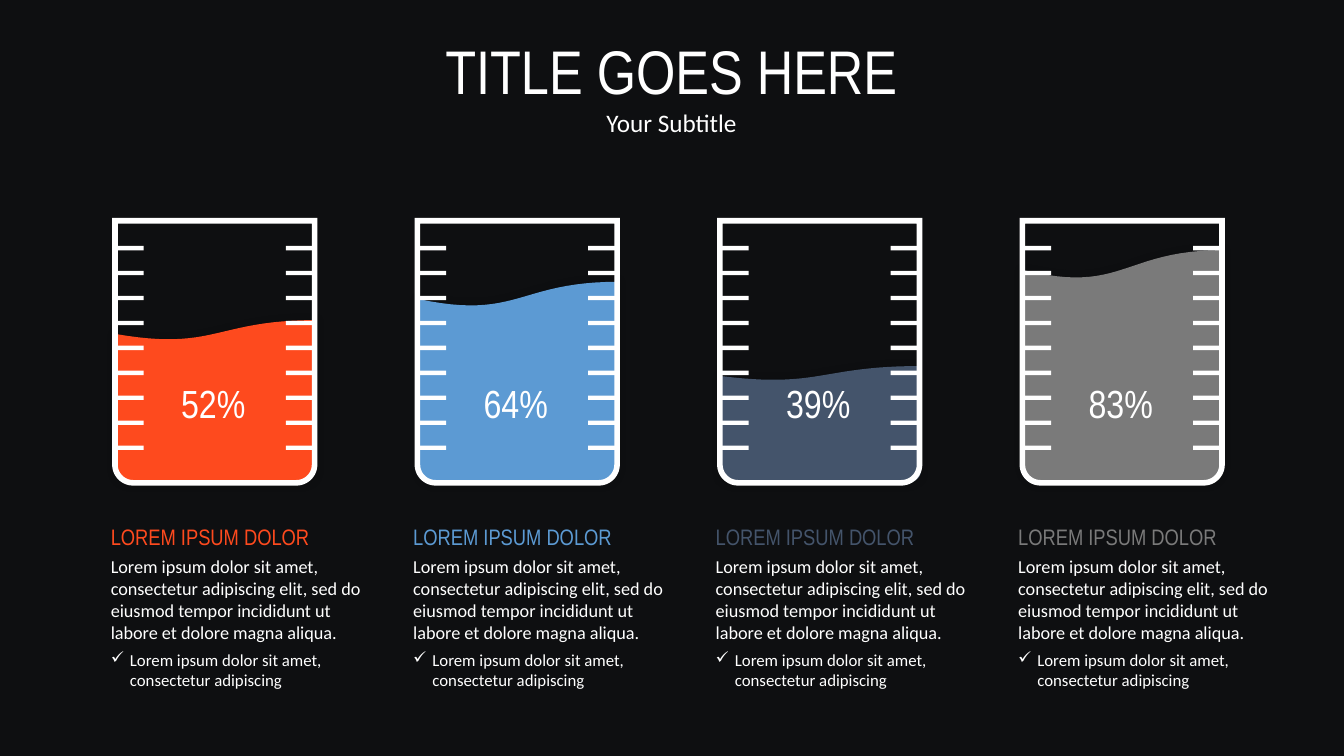
from dataclasses import dataclass

from lxml.etree import SubElement
from pptx import Presentation
from pptx.dml.color import RGBColor
from pptx.enum.text import MSO_AUTO_SIZE as AutoSize, PP_ALIGN as Align
from pptx.oxml.ns import qn
from pptx.util import Inches, Pt

SLIDE_W, SLIDE_H = 13.33, 7.5
FIRST_COLUMN, COLUMN_PITCH = 1, 3
BEAKER_INSET, BEAKER_TOP, BEAKER_BOTTOM = 0.14, 2.19, 4.79
BEAKER_W, CORNER = 1.98, 0.18
LIQUID_W, LIQUID_BOTTOM = 1.99, 4.8
TICK_COUNT, FIRST_TICK, TICK_PITCH = 9, 2.44, 0.2475
TICK_W, TICK_H, TICK_SPAN = 0.295, 0.043, 2
CURVE_STEPS = 24


@dataclass(frozen=True)
class Theme:
    background: str = "0E0F11"
    light: str = "FFFFFF"
    shadow: str = "000000"
    display: str = "Arial Narrow"
    text: str = "Calibri"
    title: int = 44
    percent: int = 28
    subtitle: int = 18
    heading: int = 16
    body: int = 13
    bullet: int = 12


THEME = Theme()
HEADING = "LOREM IPSUM DOLOR"
BODY = ("Lorem ipsum dolor sit amet, consectetur adipiscing elit, sed do "
        "eiusmod tempor incididunt ut labore et dolore magna aliqua.")
CHECKED = "Lorem ipsum dolor sit amet, consectetur adipiscing"
# percentage, height of the liquid, colour
BEAKERS = [
    ("52%", 1.71, "FE4A1E"),
    ("64%", 2.11, "5C9AD3"),
    ("39%", 1.23, "44546B"),
    ("83%", 2.44, "7A7A7A"),
]


def rgb(color):
    return RGBColor.from_string(color)


def add_box(shapes, left, top, width, height, inset=None):
    box = shapes.add_textbox(*map(Inches, (left, top, width, height)))
    frame = box.text_frame
    frame.word_wrap = True
    frame.auto_size = AutoSize.SHAPE_TO_FIT_TEXT
    if inset is not None:
        frame.margin_left = frame.margin_right = Inches(inset)
        frame.margin_top = frame.margin_bottom = Inches(inset)
    return frame


def write(frame, text, *, size, font=THEME.text, color=THEME.light,
          align=Align.LEFT, before=0, bullet=None, indent=0.19):
    """Fill the empty first paragraph, or append a new one."""
    first = frame.paragraphs[0]
    paragraph = frame.add_paragraph() if first.runs else first
    paragraph.alignment = align
    if before:
        paragraph.space_before = Pt(before)
    if bullet:
        properties = paragraph._p.get_or_add_pPr()
        properties.set("marL", str(Inches(indent)))
        properties.set("indent", str(-Inches(indent)))
        SubElement(properties, qn("a:buChar"), char=bullet)
    run = paragraph.add_run()
    run.text = text
    run.font.size = Pt(size)
    run.font.name = font
    run.font.color.rgb = rgb(color)


def curve(start, control_1, control_2, end):
    """Points along a cubic Bezier curve, both ends included."""
    points = []
    for step in range(CURVE_STEPS + 1):
        t = step / CURVE_STEPS
        weights = ((1 - t) ** 3, 3 * t * (1 - t) ** 2, 3 * t * t * (1 - t), t ** 3)
        ends = (start, control_1, control_2, end)
        points.append(tuple(sum(w * p[axis] for w, p in zip(weights, ends))
                            for axis in (0, 1)))
    return points


def rounded_bottom(left, right, bottom, rise):
    """Points from the right side round both bottom corners to the left side."""
    k = 0.45
    side = bottom - rise
    return (curve((right, side), (right, bottom - k * rise),
                  (right - k * CORNER, bottom), (right - CORNER, bottom))
            + curve((left + CORNER, bottom), (left + k * CORNER, bottom),
                    (left, bottom - k * rise), (left, side)))


def add_outline(shapes, *contours, fill=None, line=None, line_width=4):
    builder = None
    for contour in contours:
        start, *rest = [(Inches(x), Inches(y)) for x, y in contour]
        if builder is None:
            builder = shapes.build_freeform(*start, scale=1.0)
        else:
            builder.move_to(*start)
        builder.add_line_segments(rest, close=True)
    shape = builder.convert_to_shape()
    shape.shadow.inherit = False
    if fill:
        shape.fill.solid()
        shape.fill.fore_color.rgb = rgb(fill)
    else:
        shape.fill.background()
    if line:
        shape.line.color.rgb = rgb(line)
        shape.line.width = Pt(line_width)
        SubElement(shape.element.spPr.find(qn("a:ln")), qn("a:miter"), lim="800000")
    else:
        shape.line.fill.background()
    return shape


def add_soft_shadow(shape):
    effects = shape.element.spPr.find(qn("a:effectLst"))
    shadow = SubElement(effects, qn("a:outerShdw"), blurRad=str(Pt(6)),
                        dist="0", dir=str(225 * 60000), rotWithShape="0")
    color = SubElement(shadow, qn("a:srgbClr"), val=THEME.shadow)
    SubElement(color, qn("a:alpha"), val="20000")


def add_liquid(shapes, column, height, color):
    left = column + BEAKER_INSET
    right = left + LIQUID_W
    middle = (left + right) / 2
    top = LIQUID_BOTTOM - height

    def level(share):
        return top + share * height

    wave = curve((left, level(0.13)), (middle, level(0.232)),
                 (middle, level(0.05)), (right, level(0.05)))
    outline = [(right, top)] + rounded_bottom(left, right, LIQUID_BOTTOM, 0.09 * height)
    add_soft_shadow(add_outline(shapes, outline + wave, fill=color))


def rectangle(left, top, width, height):
    return [(left, top), (left + width, top),
            (left + width, top + height), (left, top + height)]


def add_glass(shapes, column):
    """The beaker's rim with its scale of paired ticks, as one group."""
    group = shapes.add_group_shape().shapes
    left = column + BEAKER_INSET
    right = left + BEAKER_W
    add_outline(group, [(left, BEAKER_TOP), (right, BEAKER_TOP)]
                + rounded_bottom(left, right, BEAKER_BOTTOM, CORNER),
                line=THEME.light)
    scale_left = column + 0.13
    for row in range(TICK_COUNT):
        y = FIRST_TICK + row * TICK_PITCH
        add_outline(group, *(rectangle(x, y, TICK_W, TICK_H) for x in
                             (scale_left + TICK_SPAN - TICK_W, scale_left)),
                    fill=THEME.light)


def add_description(shapes, column, color):
    frame = add_box(shapes, column, 5.14, 2.78, 1.78)
    write(frame, HEADING, size=THEME.heading, font=THEME.display, color=color)
    write(frame, BODY, size=THEME.body, before=4)
    write(frame, CHECKED, size=THEME.bullet, before=5, bullet="✓")


def main():
    deck = Presentation()
    deck.slide_width, deck.slide_height = Inches(SLIDE_W), Inches(SLIDE_H)
    slide = deck.slides.add_slide(deck.slide_layouts[6])
    slide.background.fill.solid()
    slide.background.fill.fore_color.rgb = rgb(THEME.background)
    shapes = slide.shapes

    title = add_box(shapes, 3.65, 0.28, 6.02, 1.14)
    write(title, "TITLE GOES HERE", size=THEME.title, font=THEME.display,
          align=Align.CENTER)
    write(title, "Your Subtitle", size=THEME.subtitle, align=Align.CENTER)

    for index, (percent, height, color) in enumerate(BEAKERS):
        column = FIRST_COLUMN + index * COLUMN_PITCH
        add_liquid(shapes, column, height, color)
        add_glass(shapes, column)
        label = add_box(shapes, column + 0.74, 3.76, 0.75, 0.47, inset=0)
        write(label, percent, size=THEME.percent, font=THEME.display,
              align=Align.CENTER)
        add_description(shapes, column, color)

    deck.save("out.pptx")


if __name__ == "__main__":
    main()
